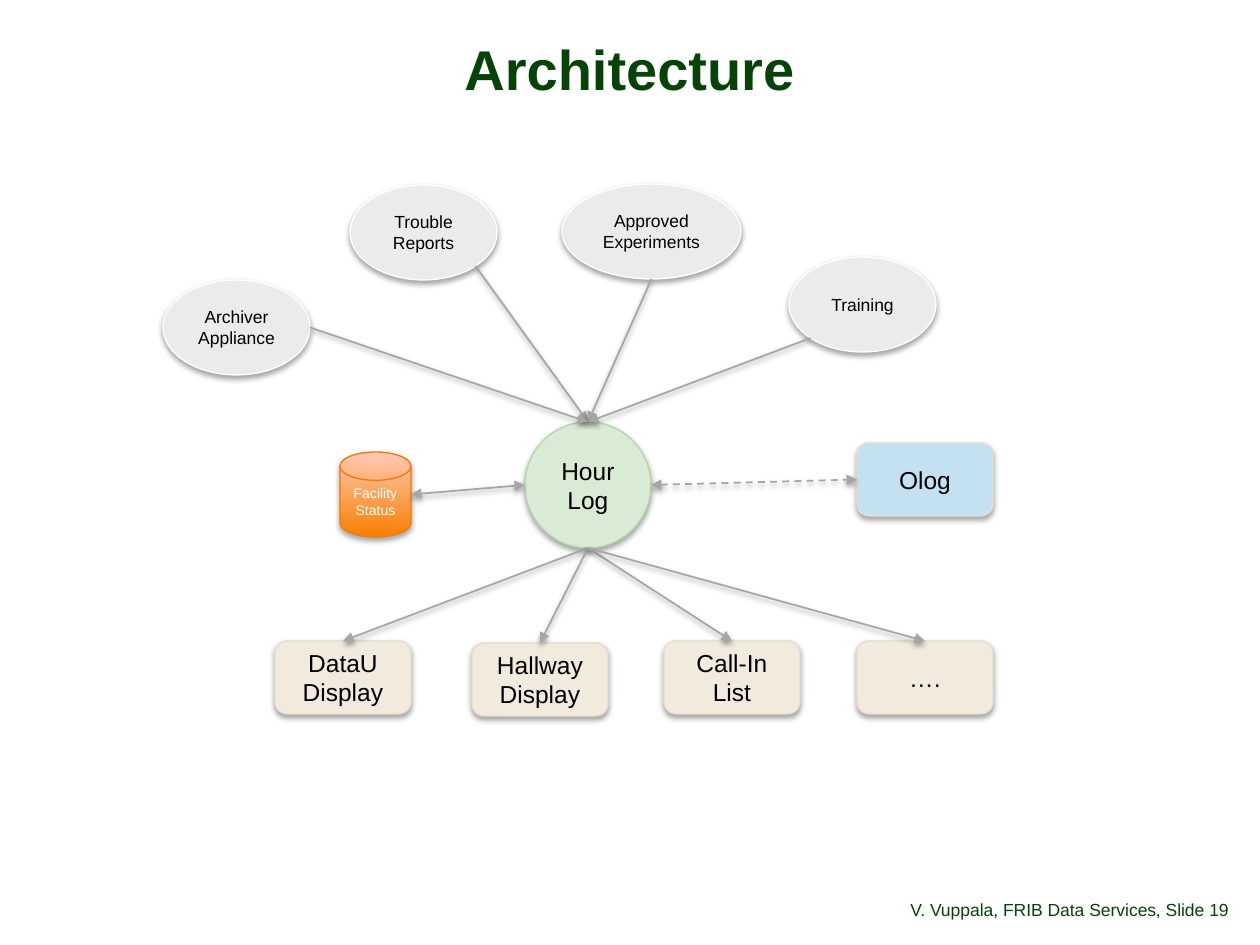
from lxml import etree
from pptx import Presentation
from pptx import util as u
from pptx.dml.color import RGBColor
from pptx.enum import dml, shapes, text
from pptx.oxml.ns import qn

SCALE = 914400 / 126
COLORS = {
    "green": "064308", "black": "000000", "white": "FFFFFF", "arrow": "A6A6A6",
    "source": "EBEBEB", "hub": "D9EAD5", "hub_edge": "B3D6AC",
    "display": "F3EADE", "box_edge": "E3DED1", "logbook": "C4E1F2",
    "disk_low": "F97F00", "disk_high": "FFC9B5", "disk_edge": "F07C03",
}
STYLES = {
    "source": dict(form="OVAL", fill="source", edge="white", size=10),
    "hub": dict(form="OVAL", fill="hub", edge="hub_edge", size=14),
    "display": dict(form="ROUNDED_RECTANGLE", fill="display", edge="box_edge", size=14),
    "logbook": dict(form="ROUNDED_RECTANGLE", fill="logbook", edge="box_edge", size=14),
    "store": dict(form="FLOWCHART_MAGNETIC_DISK", fill=("disk_low", "disk_high"),
                  edge="disk_edge", size=8, ink="white"),
}
DIAGONAL = 2 ** 0.5 / 4
SITES = {
    "top": (0.5, 0), "bottom": (0.5, 1), "left": (0, 0.5), "right": (1, 0.5),
    "lower_left": (0.5 - DIAGONAL, 0.5 + DIAGONAL),
    "lower_right": (0.5 + DIAGONAL, 0.5 + DIAGONAL),
}
NODES = {
    "Olog": ("logbook", 857, 443, 136, 73),
    "Trouble Reports": ("source", 350, 185, 147, 95),
    "Approved Experiments": ("source", 562, 184, 179, 95),
    "Training": ("source", 789, 257, 147, 95),
    "Archiver Appliance": ("source", 163, 280, 147, 95),
    "DataU Display": ("display", 275, 641, 136, 73),
    "Hallway Display": ("display", 472, 643, 136, 73),
    "Call-In List": ("display", 664, 641, 136, 73),
    "….": ("display", 857, 641, 136, 73),
    "Hour Log": ("hub", 525, 422, 126, 126),
    "Facility Status": ("store", 340, 452, 71, 85),
}
SOURCE_SITES = {
    "Trouble Reports": "lower_right", "Approved Experiments": "bottom",
    "Training": "lower_left", "Archiver Appliance": "right",
}


def px(value):
    return u.Emu(round(value * SCALE))


def rgb(name):
    return RGBColor.from_string(COLORS[name])


def apply(target, values):
    for name, value in values.items():
        setattr(target, name, value)


def write(frame, wording, size, ink, align, anchor, insets=None, spacing=None, bold=False):
    apply(frame, dict(word_wrap=True, vertical_anchor=anchor))
    if insets:
        sides = ("margin_left", "margin_top", "margin_right", "margin_bottom")
        apply(frame, dict(zip(sides, map(px, insets))))
    paragraph = frame.paragraphs[0]
    apply(paragraph, dict(alignment=align, line_spacing=spacing))
    run = paragraph.add_run()
    run.text = wording
    apply(run.font, dict(name="Arial", size=u.Pt(size), bold=bold))
    run.font.color.rgb = rgb(ink)


def add_label(slide, box, wording, **style):
    label = slide.shapes.add_textbox(*map(px, box))
    write(label.text_frame, wording, ink="green", **style)


def add_shadow(properties, distance, opacity):
    effects = properties.find(qn("a:effectLst"))
    if effects is None:
        effects = etree.SubElement(properties, qn("a:effectLst"))
    shadow = etree.SubElement(effects, qn("a:outerShdw"), blurRad="40000",
                              dist=str(distance), dir="5400000", rotWithShape="0")
    tint = etree.SubElement(shadow, qn("a:srgbClr"), val=COLORS["black"])
    etree.SubElement(tint, qn("a:alpha"), val=str(opacity * 1000))


def paint(fill, colour):
    if isinstance(colour, tuple):
        fill.gradient()
        fill.gradient_angle = 90
        for stop, name in zip(fill.gradient_stops, colour):
            stop.color.rgb = rgb(name)
    else:
        fill.solid()
        fill.fore_color.rgb = rgb(colour)


def add_node(slide, wording, kind, *box):
    style = STYLES[kind]
    form = getattr(shapes.MSO_SHAPE, style["form"])
    node = slide.shapes.add_shape(form, *map(px, box))
    paint(node.fill, style["fill"])
    node.line.color.rgb = rgb(style["edge"])
    node.line.width = u.Pt(0.75)
    node.shadow.inherit = False
    add_shadow(node.element.spPr, 23000, 35)
    write(node.text_frame, wording, style["size"], style.get("ink", "black"),
          text.PP_ALIGN.CENTER, text.MSO_ANCHOR.MIDDLE)


def site(node, name):
    _, left, top, width, height = NODES[node]
    across, down = SITES[name]
    return px(left + across * width), px(top + down * height)


def add_link(slide, start, end, ends=("tailEnd",), dashed=False):
    link = slide.shapes.add_connector(shapes.MSO_CONNECTOR.STRAIGHT,
                                      *site(*start), *site(*end))
    link.line.color.rgb = rgb("arrow")
    link.line.width = u.Pt(1)
    if dashed:
        link.line.dash_style = dml.MSO_LINE.DASH
    properties = link.element.spPr
    for end_tag in ends:
        etree.SubElement(properties.find(qn("a:ln")), qn("a:" + end_tag), type="triangle")
    add_shadow(properties, 20000, 38)


def main():
    deck = Presentation()
    apply(deck, dict(slide_width=px(1260), slide_height=px(945)))
    slide = deck.slides.add_slide(deck.slide_layouts[6])

    add_label(slide, (10, 39, 1239, 67), "Architecture", size=32, bold=True,
              align=text.PP_ALIGN.CENTER, anchor=text.MSO_ANCHOR.MIDDLE,
              insets=(8, 3, 8, 3), spacing=0.88)
    footer = dict(size=10, anchor=text.MSO_ANCHOR.BOTTOM, insets=(0, 6, 0, 6), spacing=0.9)
    add_label(slide, (571, 876, 585, 50), "V. Vuppala, FRIB Data Services",
              align=text.PP_ALIGN.RIGHT, **footer)
    add_label(slide, (1156, 876, 104, 50), ", Slide 19",
              align=text.PP_ALIGN.LEFT, **footer)

    for wording, node in NODES.items():
        add_node(slide, wording, *node)

    hub = "Hour Log"
    for source, corner in SOURCE_SITES.items():
        add_link(slide, (source, corner), (hub, "top"))
    for wording, (kind, *_) in NODES.items():
        if kind == "display":
            add_link(slide, (hub, "bottom"), (wording, "top"))
    both = ("headEnd", "tailEnd")
    add_link(slide, (hub, "right"), ("Olog", "left"), both, dashed=True)
    add_link(slide, ("Facility Status", "right"), (hub, "left"), both)

    deck.save("out.pptx")


if __name__ == "__main__":
    main()
